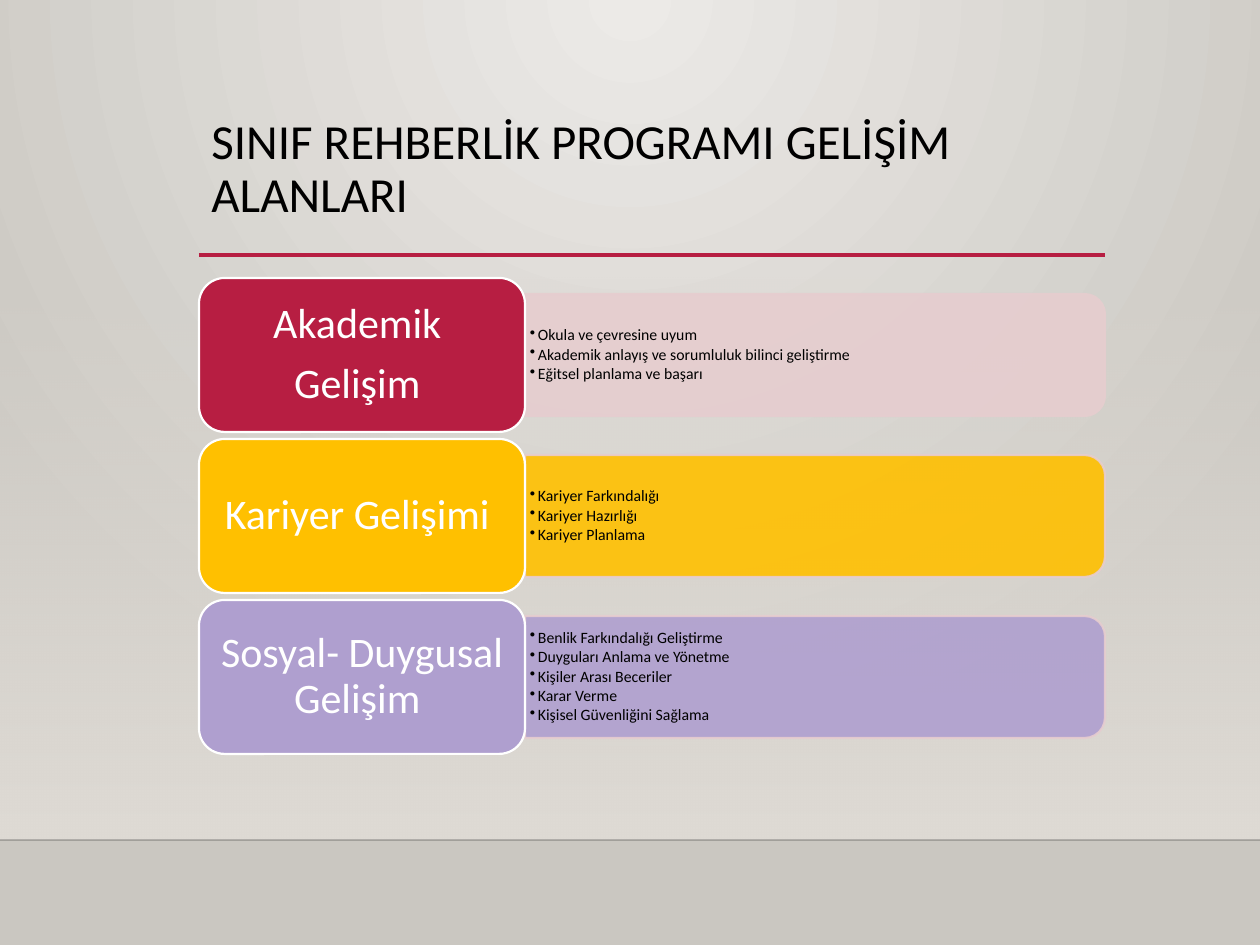
from lxml import etree
from pptx import Presentation
from pptx import util as u
from pptx.dml.color import RGBColor
from pptx.enum import shapes, text
from pptx.oxml import parse_xml
from pptx.oxml.ns import nsdecls, qn

PX = 914400 // 126
FONT = "Calibri"
LEFT, RIGHT = 199, 1105
CARD_W, CARD_H = 326, 154
PANEL_W, PANEL_H = 580, 122
FIRST_TOP, PITCH = 278, 161
AREAS = [
    ("B71E42", "E6CDCF", ["Akademik ", "Gelişim "],
     ["Okula ve çevresine uyum",
      "Akademik anlayış ve sorumluluk bilinci geliştirme",
      "Eğitsel planlama ve başarı"]),
    ("FFC000", "FFC000", ["Kariyer Gelişimi "],
     ["Kariyer Farkındalığı", "Kariyer Hazırlığı", "Kariyer Planlama"]),
    ("AF9FCF", "AF9FCF", ["Sosyal- Duygusal Gelişim "],
     ["Benlik Farkındalığı Geliştirme", "Duyguları Anlama ve Yönetme",
      "Kişiler Arası Beceriler", "Karar Verme",
      "Kişisel Güvenliğini Sağlama"]),
]


def px(*values):
    return [u.Emu(v * PX) for v in values]


def rgb(value):
    return RGBColor.from_string(value)


def paint(fill, color, holder=None, alpha=100):
    """Solid fill; alpha in percent is set on the colour found in holder."""
    fill.solid()
    fill.fore_color.rgb = rgb(color)
    if alpha < 100:
        clr = holder.find(qn("a:solidFill")).find(qn("a:srgbClr"))
        etree.SubElement(clr, qn("a:alpha")).set("val", str(alpha * 1000))


def gradient(fill, root, stops, direction):
    """Put a gradient of (percent, colour, alpha) stops in place of the fill."""
    fill.solid()
    old = root.xpath(".//a:solidFill")[0]
    gs = "".join(
        f'<a:gs pos="{pos * 1000}"><a:srgbClr val="{color}">'
        f'<a:alpha val="{alpha * 1000}"/></a:srgbClr></a:gs>'
        for pos, color, alpha in stops)
    old.getparent().replace(old, parse_xml(
        f'<a:gradFill {nsdecls("a")} rotWithShape="1"><a:gsLst>{gs}</a:gsLst>'
        f'{direction}</a:gradFill>'))


def add_shape(s, kind, box):
    sp = s.shapes.add_shape(kind, *px(*box))
    sp.shadow.inherit = False
    return sp


def add_line(s, x1, x2, y, color, width, alpha=100):
    line = s.shapes.add_connector(shapes.MSO_CONNECTOR.STRAIGHT, *px(x1, y, x2, y))
    line.line.width = u.Pt(width)
    paint(line.line.fill, color, line.line._get_or_add_ln(), alpha)
    etree.SubElement(line._element.spPr, qn("a:effectLst"))


def add_text(s, box, lines, size, color="000000", align=text.PP_ALIGN.LEFT,
             anchor=text.MSO_ANCHOR.MIDDLE, after=0, bullet=False):
    tf = s.shapes.add_textbox(*px(*box)).text_frame
    tf.word_wrap = True
    tf.vertical_anchor = anchor
    if bullet:
        tf.margin_left, tf.margin_right, tf.margin_top, tf.margin_bottom = px(5, 5, 3, 3)
    for i, line in enumerate(lines):
        p = tf.paragraphs[0] if i == 0 else tf.add_paragraph()
        p.alignment = align
        p.line_spacing = 0.9
        p.space_after = u.Pt(after)
        if bullet:
            pPr = p._p.get_or_add_pPr()
            indent = 8 * PX
            pPr.set("marL", str(indent))
            pPr.set("indent", str(-indent))
            etree.SubElement(pPr, qn("a:buChar")).set("char", "•")
        r = p.add_run()
        r.text = line
        r.font.size = u.Pt(size)
        r.font.name = FONT
        r.font.color.rgb = rgb(color)


def add_backdrop(s):
    gradient(s.background.fill, s._element,
             [(0, "ECEAE7", 100), (100, "CAC7C1", 100)],
             '<a:path path="circle">'
             '<a:fillToRect l="43000" t="0" r="43000" b="100000"/></a:path>')
    wall = add_shape(s, shapes.MSO_SHAPE.RECTANGLE, (0, 277, 1260, 563))
    gradient(wall.fill, wall._element.spPr,
             [(0, "DFDBD5", 0), (100, "DFDBD5", 100)],
             '<a:lin ang="5400000" scaled="0"/>')
    wall.line.fill.background()
    add_line(s, 0, 1260, 840, "000001", 1, 20)


def add_area(s, top, color, tint, name, goals):
    middle = top + CARD_H // 2
    panel_left = LEFT + CARD_W
    panel = add_shape(s, shapes.MSO_SHAPE.ROUND_2_SAME_RECTANGLE,
                      (panel_left + (PANEL_W - PANEL_H) // 2,
                       middle - PANEL_W // 2, PANEL_H, PANEL_W))
    panel.rotation = 90
    paint(panel.fill, tint, panel._element.spPr, 90)
    panel.line.width = u.Pt(1.25)
    paint(panel.line.fill, "E6CDCF", panel.line._get_or_add_ln(), 90)
    add_text(s, (panel_left, middle - 55, PANEL_W - 6, 110), goals, 9,
             after=1.35, bullet=True)

    card = add_shape(s, shapes.MSO_SHAPE.ROUNDED_RECTANGLE,
                     (LEFT, top, CARD_W, CARD_H))
    paint(card.fill, color)
    card.line.width = u.Pt(1.25)
    paint(card.line.fill, "FFFFFF")
    add_text(s, (LEFT + 7, top + 7, CARD_W - 14, CARD_H - 14), name, 24,
             "FFFFFF", text.PP_ALIGN.CENTER, after=8.4)


def main():
    prs = Presentation()
    prs.slide_width, prs.slide_height = u.Inches(10), u.Inches(7.5)
    s = prs.slides.add_slide(prs.slide_layouts[6])
    add_backdrop(s)
    add_line(s, LEFT, RIGHT, 255, "B71E42", 2.5)
    add_text(s, (LEFT, 111, RIGHT - LEFT, 145),
             ["SINIF REHBERLİK PROGRAMI GELİŞİM ALANLARI"], 28,
             anchor=text.MSO_ANCHOR.TOP)
    for i, area in enumerate(AREAS):
        add_area(s, FIRST_TOP + i * PITCH, *area)
    prs.save("out.pptx")


if __name__ == "__main__":
    main()
